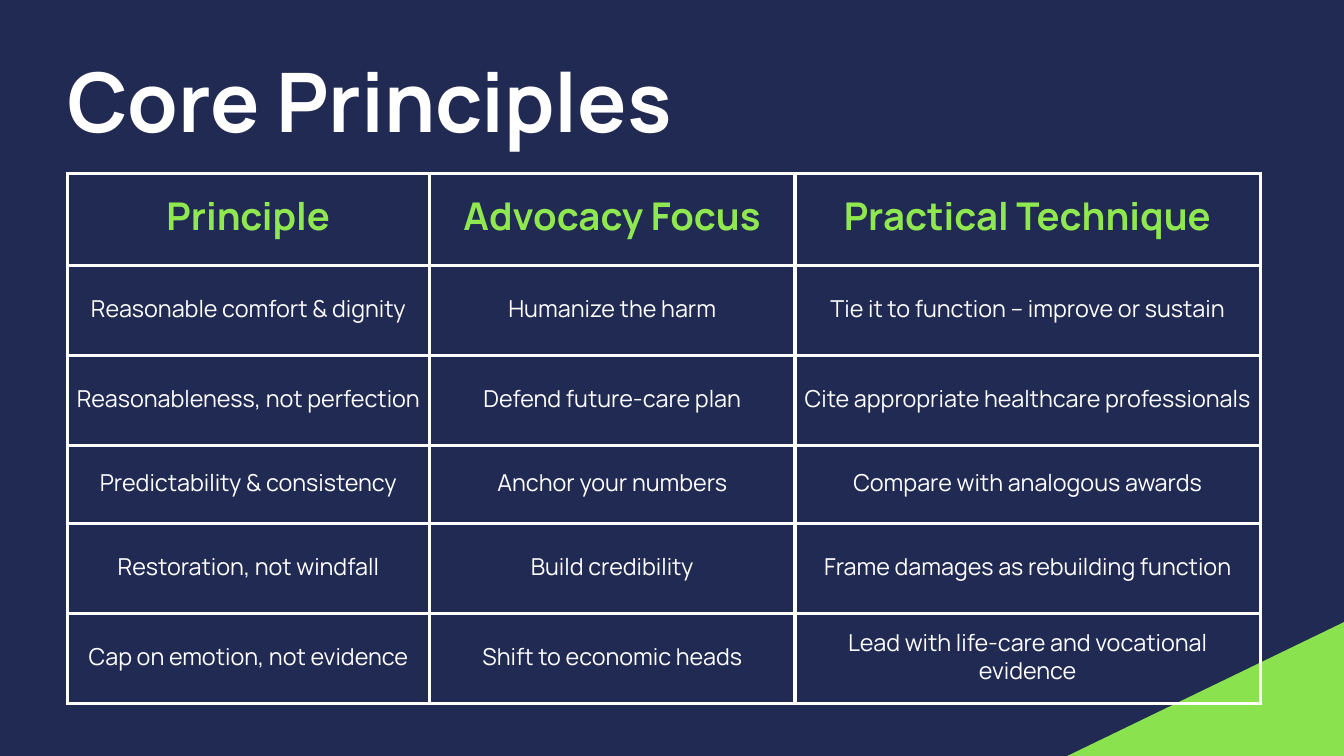
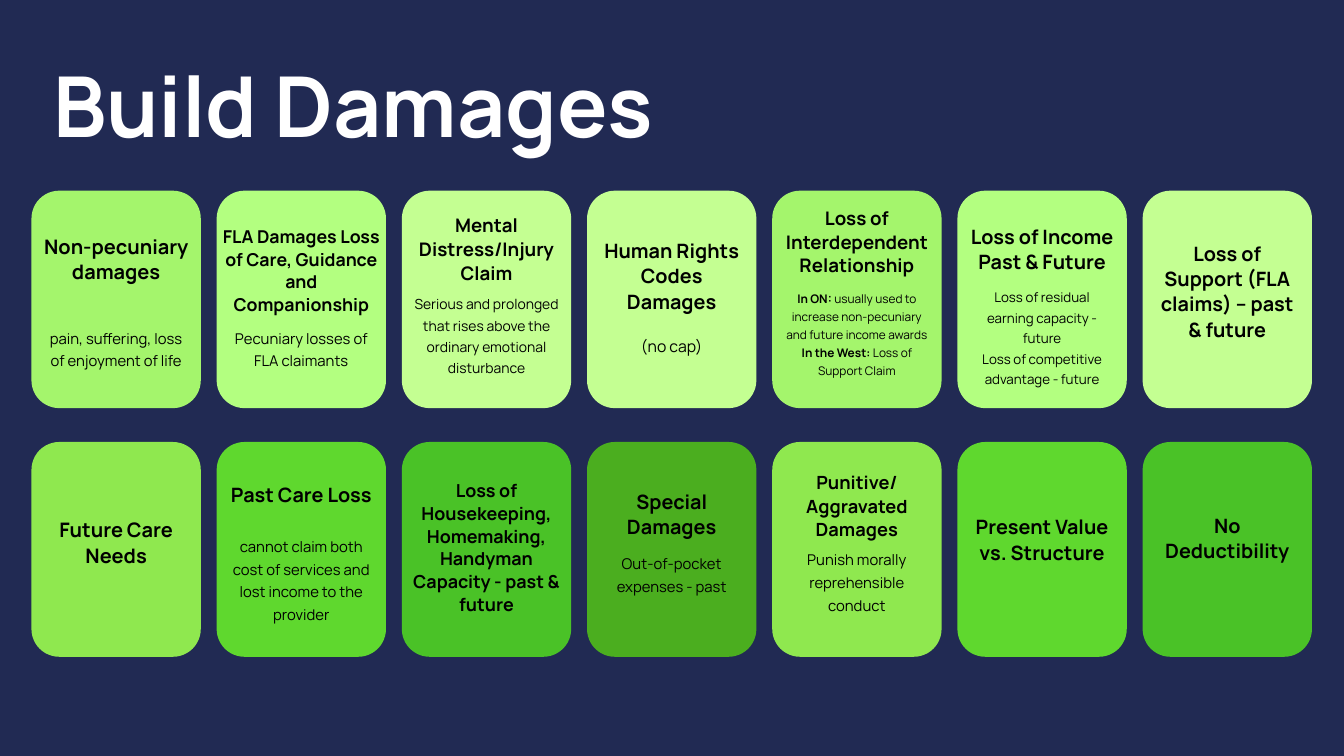
from dataclasses import dataclass

from lxml import etree
from pptx import Presentation
from pptx import util as u
from pptx.dml.color import RGBColor
from pptx.enum import shapes, text
from pptx.oxml.ns import qn
from pptx.slide import Slide
from pptx.text.text import _Paragraph as Paragraph


@dataclass(frozen=True)
class Theme:
    font: str = "Manrope"
    navy: str = "212A53"
    white: str = "FFFFFF"
    black: str = "000000"
    corner: str = "8AE34E"
    lime: str = "8FE84F"
    mint: str = "A4F56C"
    pale: str = "B3FF80"
    palest: str = "C4FF92"
    bright: str = "5FD82E"
    green: str = "4AC227"
    deep: str = "4BAE1F"
    table_head: float = 41
    table_body: float = 25
    head_xl: float = 21.4
    head_l: float = 21.2
    head_m: float = 20
    head_s: float = 19.5
    head_xs: float = 19.2
    head_xxs: float = 19
    note_l: float = 16.9
    note_m: float = 15.9
    note_s: float = 14.9
    note_xs: float = 14.3
    note_xxs: float = 12.7
    table_leading: float = 1.2
    head_leading: float = 1.28
    note_leading: float = 1.53
    border: float = 3.75


T = Theme()
SLIDE_W, SLIDE_H = 50.8, 28.58


@dataclass(frozen=True)
class Title:
    text: str
    left: float
    top: float
    width: float
    height: float
    size: float
    spacing: float


@dataclass(frozen=True)
class Block:
    text: str
    size: float
    top: float
    width: float
    lines: int
    leads: tuple[str, ...] = ()


@dataclass(frozen=True)
class Card:
    fill: str
    head: Block
    note: Block | None = None


@dataclass(frozen=True)
class CardRow:
    top: float
    height: float
    cards: tuple[Card, ...]


PRINCIPLES = (
    ("Principle", "Advocacy Focus", "Practical Technique"),
    ("Reasonable comfort & dignity", "Humanize the harm",
     "Tie it to function – improve or sustain"),
    ("Reasonableness, not perfection", "Defend future-care plan",
     "Cite appropriate healthcare professionals"),
    ("Predictability & consistency", "Anchor your numbers",
     "Compare with analogous awards"),
    ("Restoration, not windfall", "Build credibility",
     "Frame damages as rebuilding function"),
    ("Cap on emotion, not evidence", "Shift to economic heads",
     "Lead with life-care and vocational evidence"),
)
COL_WIDTHS = (13.69, 13.82, 17.58)
ROW_HEIGHTS = (3.48, 3.4, 3.4, 2.97, 3.4, 3.4)
TABLE_LEFT, TABLE_TOP, CELL_MARGIN = 2.54, 6.55, 0.25

CARD_LEFT, CARD_PITCH, CARD_W, CARD_RADIUS = 1.19, 7.0, 6.4, 1.05
CARD_ROWS = (
    CardRow(7.21, 8.22, (
        Card(T.mint,
             Block("Non-pecuniary damages", T.head_xl, 8.79, 5.66, 3),
             Block("pain, suffering, loss of enjoyment of life", T.note_m, 12.27, 5.59, 2)),
        Card(T.pale,
             Block("FLA Damages Loss of Care, Guidance and Companionship",
                   T.head_xxs, 8.48, 5.94, 4),
             Block("Pecuniary losses of FLA claimants", T.note_m, 12.27, 5.23, 2)),
        Card(T.palest,
             Block("Mental Distress/Injury Claim", T.head_m, 8.03, 5.49, 3),
             Block("Serious and prolonged that rises above the ordinary emotional disturbance",
                   T.note_s, 11.02, 5.89, 5)),
        Card(T.palest,
             Block("Human Rights Codes Damages", T.head_l, 8.97, 5.66, 3),
             Block("(no cap)", T.note_l, 12.52, 4.78, 1)),
        Card(T.mint,
             Block("Loss of Interdependent Relationship", T.head_m, 7.75, 5.79, 3),
             Block("usually used to increase non-pecuniary and future income awards\n"
                   "Loss of Support Claim",
                   T.note_xxs, 10.87, 5.66, 6, ("In ON: ", "In the West: "))),
        Card(T.pale,
             Block("Loss of Income\nPast & Future", T.head_l, 8.43, 5.66, 2),
             Block("Loss of residual earning capacity - future\n"
                   "Loss of competitive advantage - future", T.note_xs, 10.77, 5.28, 5)),
        Card(T.palest,
             Block("Loss of Support (FLA claims) – past & future", T.head_l, 9.07, 5.66, 4)),
    )),
    CardRow(16.71, 8.12, (
        Card(T.lime, Block("Future Care Needs", T.head_xl, 19.51, 5.66, 2)),
        Card(T.bright,
             Block("Past Care Loss", T.head_l, 18.19, 5.94, 1),
             Block("cannot claim both cost of services and lost income to the provider",
                   T.note_m, 20.14, 5.23, 4)),
        Card(T.green,
             Block("Loss of Housekeeping, Homemaking, Handyman Capacity - past & future",
                   T.head_xs, 18.06, 5.66, 6)),
        Card(T.deep,
             Block("Special Damages", T.head_l, 18.44, 5.23, 2),
             Block("Out-of-pocket expenses - past", T.note_m, 20.78, 4.98, 2)),
        Card(T.lime,
             Block("Punitive/ Aggravated Damages", T.head_s, 17.78, 5.94, 3),
             Block("Punish morally reprehensible conduct", T.note_m, 20.65, 4.9, 3)),
        Card(T.bright, Block("Present Value vs. Structure", T.head_l, 19.41, 5.66, 2)),
        Card(T.green, Block("No Deductibility", T.head_l, 19.35, 5.31, 2)),
    )),
)


def rgb(colour: str) -> RGBColor:
    return RGBColor.from_string(colour)


def style(p: Paragraph, size: float, colour: str, bold: bool, spacing: float,
          align: text.PP_ALIGN = text.PP_ALIGN.CENTER) -> None:
    p.alignment = align
    p.line_spacing = u.Pt(round(spacing, 1))
    for r in p.runs:
        r.font.name = T.font
        r.font.size = u.Pt(size)
        r.font.bold = bold
        r.font.color.rgb = rgb(colour)


def add_box(s: Slide, left: float, top: float, width: float, height: float):
    tf = s.shapes.add_textbox(u.Cm(left), u.Cm(top), u.Cm(width), u.Cm(height)).text_frame
    tf.word_wrap = True
    tf.auto_size = text.MSO_AUTO_SIZE.SHAPE_TO_FIT_TEXT
    tf.margin_left = tf.margin_right = tf.margin_top = tf.margin_bottom = 0
    return tf


def paint(sp, colour: str) -> None:
    sp.shadow.inherit = False
    sp.fill.solid()
    sp.fill.fore_color.rgb = rgb(colour)
    sp.line.fill.background()


def add_slide(prs, title: Title) -> Slide:
    s = prs.slides.add_slide(prs.slide_layouts[6])
    s.background.fill.solid()
    s.background.fill.fore_color.rgb = rgb(T.navy)
    tf = add_box(s, title.left, title.top, title.width, title.height)
    tf.text = title.text
    style(tf.paragraphs[0], title.size, T.white, True, title.spacing, text.PP_ALIGN.LEFT)
    return s


def add_corner(s: Slide) -> None:
    fb = s.shapes.build_freeform(u.Cm(SLIDE_W), u.Cm(23.52))
    fb.add_line_segments([(u.Cm(SLIDE_W), u.Cm(SLIDE_H)), (u.Cm(40.34), u.Cm(SLIDE_H))])
    paint(fb.convert_to_shape(), T.corner)


def add_borders(cell) -> None:
    tc_pr = cell._tc.get_or_add_tcPr()
    for side in ("a:lnL", "a:lnR", "a:lnT", "a:lnB"):
        ln = etree.SubElement(tc_pr, qn(side), w=str(u.Pt(T.border)))
        fill = etree.SubElement(ln, qn("a:solidFill"))
        etree.SubElement(fill, qn("a:srgbClr"), val=T.white)


def add_principles(s: Slide) -> None:
    table = s.shapes.add_table(
        len(ROW_HEIGHTS), len(COL_WIDTHS), u.Cm(TABLE_LEFT), u.Cm(TABLE_TOP),
        u.Cm(sum(COL_WIDTHS)), u.Cm(sum(ROW_HEIGHTS))).table
    table.first_row = table.horz_banding = False
    for col, width in zip(table.columns, COL_WIDTHS):
        col.width = u.Cm(width)
    for i, (row, height) in enumerate(zip(table.rows, ROW_HEIGHTS)):
        row.height = u.Cm(height)
        header = i == 0
        size = T.table_head if header else T.table_body
        for cell, words in zip(row.cells, PRINCIPLES[i]):
            add_borders(cell)
            cell.fill.background()
            cell.vertical_anchor = text.MSO_ANCHOR.MIDDLE
            cell.margin_left = cell.margin_right = u.Cm(CELL_MARGIN)
            cell.margin_top = cell.margin_bottom = u.Cm(CELL_MARGIN)
            cell.text_frame.text = words
            style(cell.text_frame.paragraphs[0], size, T.lime if header else T.white,
                  header, size * T.table_leading)


def add_block(s: Slide, block: Block, centre: float, bold: bool) -> None:
    spacing = block.size * (T.head_leading if bold else T.note_leading)
    tf = add_box(s, centre - block.width / 2, block.top, block.width,
                 block.lines * spacing * 2.54 / 72)
    tf.text = block.text
    for p in tf.paragraphs:
        style(p, block.size, T.black, bold, spacing)
    for p, lead in zip(tf.paragraphs, block.leads):
        rest = p.text
        p.text = lead
        p.add_run().text = rest
        style(p, block.size, T.black, bold, spacing)
        p.runs[0].font.bold = True


def add_card(s: Slide, card: Card, left: float, row: CardRow) -> None:
    sp = s.shapes.add_shape(shapes.MSO_SHAPE.ROUNDED_RECTANGLE, u.Cm(left), u.Cm(row.top),
                            u.Cm(CARD_W), u.Cm(row.height))
    sp.adjustments[0] = CARD_RADIUS / CARD_W
    paint(sp, card.fill)
    centre = left + CARD_W / 2
    add_block(s, card.head, centre, True)
    if card.note:
        add_block(s, card.note, centre, False)


def main() -> None:
    prs = Presentation()
    prs.slide_width, prs.slide_height = u.Cm(SLIDE_W), u.Cm(SLIDE_H)

    s = add_slide(prs, Title("Core Principles", 2.54, 1.3, 29.41, 4.45, 88, 123.2))
    add_corner(s)
    add_principles(s)

    s = add_slide(prs, Title("Build Damages", 2.01, 2.08, 26.62, 3.99, 90, 106.2))
    for row in CARD_ROWS:
        for i, card in enumerate(row.cards):
            add_card(s, card, CARD_LEFT + i * CARD_PITCH, row)

    prs.save("out.pptx")


if __name__ == "__main__":
    main()
